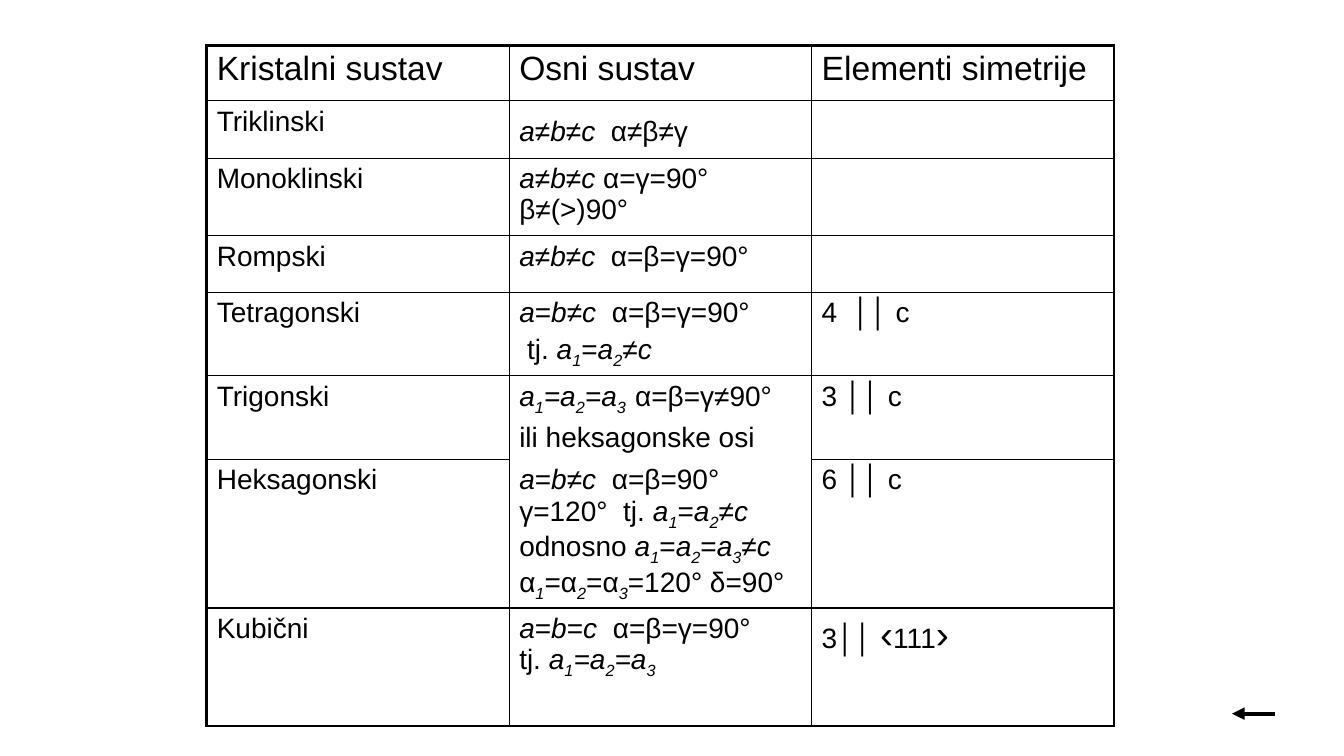
from dataclasses import dataclass
from itertools import groupby

from lxml import etree
from pptx import Presentation
from pptx import util as u
from pptx.dml.color import RGBColor
from pptx.enum import shapes
from pptx.oxml import ns


@dataclass(frozen=True)
class Theme:
    font: str = "Arial"
    ink: RGBColor = RGBColor(0, 0, 0)
    paper: RGBColor = RGBColor(255, 255, 255)
    header_size: float = 24
    body_size: float = 20
    large_size: float = 28
    paragraph_gap: float = 4
    inner_border: float = 1
    outer_border: float = 2.25
    arrow_width: float = 3


@dataclass(frozen=True)
class CrystalRow:
    height: float
    system: str
    axes: str
    symmetry: str = ""


THEME = Theme()
ITALIC, SUBSCRIPT, LARGE, LINE_BREAK = "*", "_", "~", "|"
COLUMN_WIDTH = 3
TRIGONAL, HEXAGONAL = 5, 6
AXES_COLUMN = 1

ROWS = [
    CrystalRow(0.55, "Kristalni sustav", "Osni sustav", "Elementi simetrije"),
    CrystalRow(0.57, "Triklinski", "*a*≠*b*≠*c*  α≠β≠γ~ ~"),
    CrystalRow(0.77, "Monoklinski", "*a*≠*b*≠*c* α=γ=90° β≠(>)90°"),
    CrystalRow(0.56, "Rompski", "*a*≠*b*≠*c*  α=β=γ=90°"),
    CrystalRow(0.83, "Tetragonski",
               "*a*=*b*≠*c*  α=β=γ=90°\n tj. *a_1_*=*a_2_*≠*c*", "4  ││ c"),
    CrystalRow(0.83, "Trigonski",
               "*a_1_=a_2_=a_3  _*α=β=γ≠90°\nili heksagonske osi", "3 ││ c"),
    CrystalRow(1.43, "Heksagonski",
               "*a*=*b*≠*c*  α=β=90° γ=120°  tj. *a_1_*=*a_2_*≠*c* odnosno "
               "*a_1_*=*a_2_*=*a_3_*≠*c* α*_1_*=α*_2_*=α*_3_*=120° δ=90°", "6 ││ c"),
    CrystalRow(1.17, "Kubični", "*a*=*b*=*c*  α=β=γ=90°|tj. *a_1_=a_2_=a_3_*",
               "3││ ~‹~111~›~"),
]


def styled_pieces(markup: str) -> list[tuple[str, frozenset[str]]]:
    active: frozenset[str] = frozenset()
    letters = []
    for letter in markup:
        if letter in (ITALIC, SUBSCRIPT, LARGE):
            active = active ^ {letter}
        else:
            letters.append((letter, active))
    return [("".join(letter for letter, _ in group), styles)
            for styles, group in groupby(letters, key=lambda pair: pair[1])]


def write_paragraph(paragraph, markup: str, size: float) -> None:
    paragraph.font.name = THEME.font
    paragraph.font.size = u.Pt(size)
    paragraph.font.color.rgb = THEME.ink
    for text, styles in styled_pieces(markup):
        for index, part in enumerate(text.split(LINE_BREAK)):
            if index:
                paragraph.add_line_break()
            run = paragraph.add_run()
            run.text = part
            if ITALIC in styles:
                run.font.italic = True
            if LARGE in styles:
                run.font.size = u.Pt(THEME.large_size)
            if SUBSCRIPT in styles:
                run._r.get_or_add_rPr().set("baseline", "-25000")


def write_cell(cell, markup: str, size: float) -> None:
    cell.fill.solid()
    cell.fill.fore_color.rgb = THEME.paper
    frame = cell.text_frame
    for index, line in enumerate(markup.split("\n")):
        paragraph = frame.add_paragraph() if index else frame.paragraphs[0]
        if index:
            paragraph.space_before = u.Pt(THEME.paragraph_gap)
        write_paragraph(paragraph, line, size)


def border_widths(row: int, column: int) -> dict[str, float]:
    inner, outer = THEME.inner_border, THEME.outer_border
    widths = {
        "lnL": outer if column == 0 else inner,
        "lnR": outer if column == 2 else inner,
        "lnT": outer if row == 0 else inner,
        "lnB": outer if row == len(ROWS) - 1 else inner,
    }
    if column == AXES_COLUMN and row == TRIGONAL:
        widths["lnB"] = 0
    if column == AXES_COLUMN and row == HEXAGONAL:
        widths["lnT"] = 0
    return widths


def draw_borders(cell, widths: dict[str, float]) -> None:
    properties = cell._tc.get_or_add_tcPr()
    for position, (side, width) in enumerate(widths.items()):
        line = etree.Element(ns.qn(f"a:{side}"), w=str(u.Pt(width)))
        if width:
            fill = etree.SubElement(line, ns.qn("a:solidFill"))
            etree.SubElement(fill, ns.qn("a:srgbClr"), val=str(THEME.ink))
        else:
            etree.SubElement(line, ns.qn("a:noFill"))
        properties.insert(position, line)


def add_crystal_table(slide) -> None:
    height = sum(row.height for row in ROWS)
    table = slide.shapes.add_table(
        len(ROWS), 3, u.Inches(2.05), u.Inches(0.45),
        u.Inches(3 * COLUMN_WIDTH), u.Inches(height)).table
    table.first_row = False
    table.horz_banding = False
    for column in table.columns:
        column.width = u.Inches(COLUMN_WIDTH)
    for row_index, row in enumerate(ROWS):
        table.rows[row_index].height = u.Inches(row.height)
        size = THEME.body_size if row_index else THEME.header_size
        for column_index, markup in enumerate((row.system, row.axes, row.symmetry)):
            cell = table.cell(row_index, column_index)
            write_cell(cell, markup, size)
            draw_borders(cell, border_widths(row_index, column_index))


def add_back_arrow(slide) -> None:
    arrow = slide.shapes.add_connector(
        shapes.MSO_CONNECTOR.STRAIGHT,
        u.Inches(12.65), u.Inches(7.08), u.Inches(12.22), u.Inches(7.08))
    arrow.line.color.rgb = THEME.ink
    arrow.line.width = u.Pt(THEME.arrow_width)
    etree.SubElement(arrow.line._get_or_add_ln(), ns.qn("a:tailEnd"), type="triangle")
    etree.SubElement(arrow._element.spPr, ns.qn("a:effectLst"))


def main() -> None:
    presentation = Presentation()
    presentation.slide_width = u.Inches(13.33)
    presentation.slide_height = u.Inches(7.5)
    slide = presentation.slides.add_slide(presentation.slide_layouts[6])
    add_crystal_table(slide)
    add_back_arrow(slide)
    presentation.save("out.pptx")


if __name__ == "__main__":
    main()
